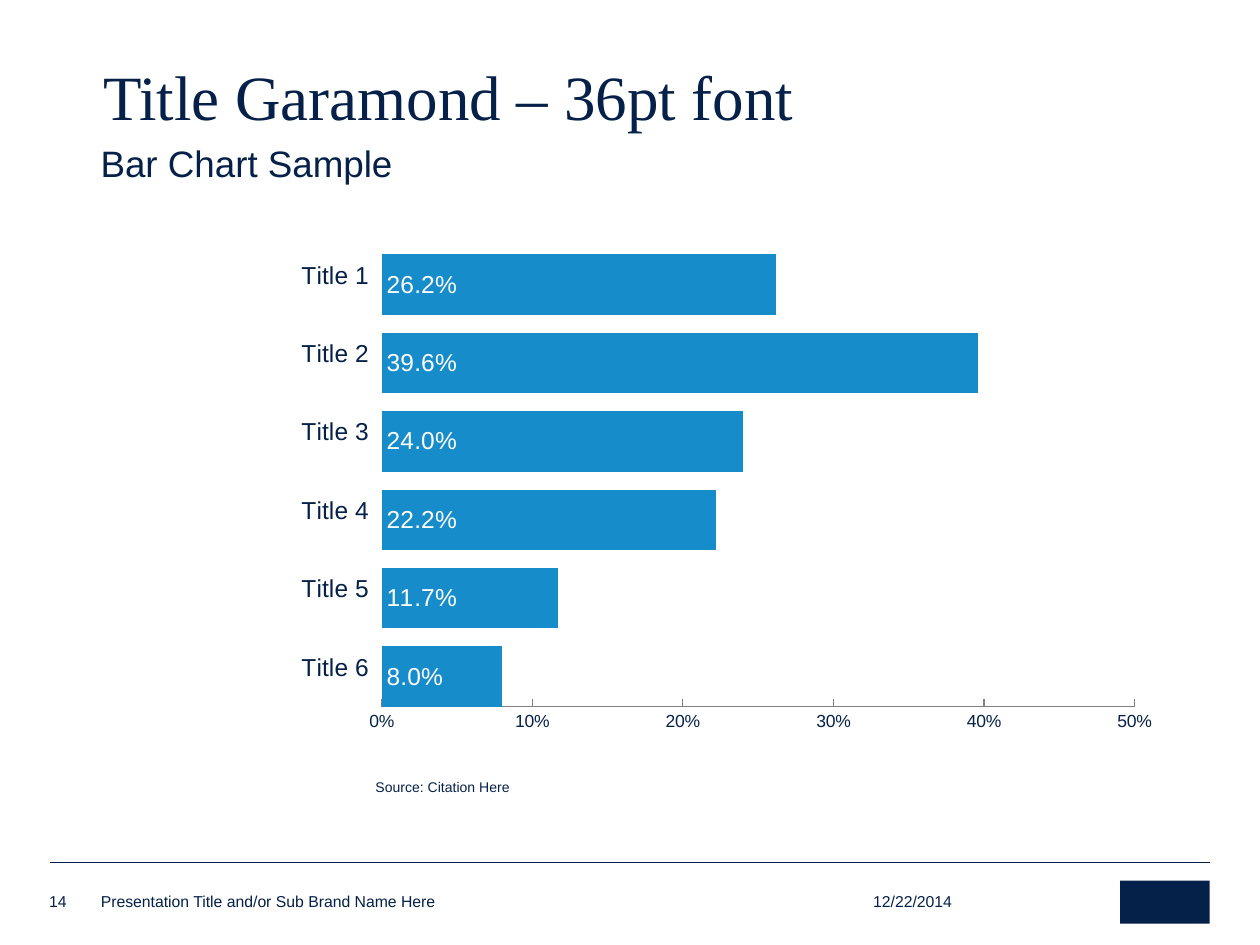
from dataclasses import dataclass

from lxml import etree
from pptx import Presentation
from pptx.chart.data import CategoryChartData
from pptx.dml.color import RGBColor
from pptx.enum.chart import XL_CHART_TYPE as ChartType
from pptx.enum.chart import XL_LABEL_POSITION as LabelPosition
from pptx.enum.chart import XL_TICK_MARK as TickMark
from pptx.enum.shapes import MSO_CONNECTOR as Connector
from pptx.enum.shapes import MSO_SHAPE as Shape
from pptx.enum.text import MSO_ANCHOR as Anchor
from pptx.oxml import parse_xml
from pptx.oxml.ns import nsdecls, qn
from pptx.util import Inches, Pt


@dataclass(frozen=True)
class Theme:
    navy: RGBColor = RGBColor(0x05, 0x20, 0x49)
    blue: RGBColor = RGBColor(0x17, 0x8C, 0xCB)
    gray: RGBColor = RGBColor(0x80, 0x80, 0x80)
    white: RGBColor = RGBColor(0xFF, 0xFF, 0xFF)
    serif: str = "Times New Roman"
    sans: str = "Arial"
    title: int = 36
    subtitle: int = 21
    category: int = 14
    scale: int = 10
    footer: int = 9
    source: int = 8


def set_all(target, values):
    for name, value in values.items():
        setattr(target, name, value)


class SlideBuilder:
    """Places elements on a grid of 100 columns by 75 rows."""

    columns, rows = 100, 75

    def __init__(self, presentation, theme):
        self.theme = theme
        self.column = presentation.slide_width / self.columns
        self.row = presentation.slide_height / self.rows
        self.slide = presentation.slides.add_slide(presentation.slide_layouts[6])

    def place(self, column, row, width, height):
        return (round(column * self.column), round(row * self.row),
                round(width * self.column), round(height * self.row))

    def style_font(self, font, size, color=None, name=None):
        set_all(font, {"size": Pt(size), "name": name or self.theme.sans})
        font.color.rgb = color or self.theme.navy

    def text(self, words, area, size, font=None, spacing=1.0,
             anchor=Anchor.TOP, inset=(0, 0)):
        """Inset is horizontal, vertical in inches."""
        box = self.slide.shapes.add_textbox(*self.place(*area))
        across, down = map(Inches, inset)
        set_all(box.text_frame, {
            "word_wrap": True, "vertical_anchor": anchor,
            "margin_left": across, "margin_right": across,
            "margin_top": down, "margin_bottom": down})
        paragraph = box.text_frame.paragraphs[0]
        paragraph.line_spacing = spacing
        run = paragraph.add_run()
        run.text = words
        self.style_font(run.font, size, name=font)

    def rule(self, left, right, row):
        x, y, width, _ = self.place(left, row, right - left, 0)
        line = self.slide.shapes.add_connector(
            Connector.STRAIGHT, x, y, x + width, y)
        line.line.color.rgb = self.theme.navy
        line.line.width = Pt(0.25)
        etree.SubElement(line._element.spPr, qn("a:effectLst"))

    def block(self, area):
        shape = self.slide.shapes.add_shape(Shape.RECTANGLE, *self.place(*area))
        shape.shadow.inherit = False
        shape.fill.solid()
        shape.fill.fore_color.rgb = self.theme.navy
        shape.line.fill.background()

    def bar_chart(self, area, categories, series, plot_area):
        theme = self.theme
        data = CategoryChartData(number_format="0.0%")
        data.categories = categories
        for name, values in series.items():
            data.add_series(name, values)
        chart = self.slide.shapes.add_chart(
            ChartType.BAR_CLUSTERED, *self.place(*area), data).chart
        set_all(chart, {"has_legend": False, "has_title": False})
        self.style_font(chart.font, 18, name=theme.serif)
        plot = chart.plots[0]
        set_all(plot, {"gap_width": 0, "overlap": 70, "vary_by_categories": False})
        for bars in plot.series:
            bars.format.fill.solid()
            bars.format.fill.fore_color.rgb = theme.blue
        labels = plot.series[0].data_labels
        set_all(labels, {
            "show_value": True, "position": LabelPosition.INSIDE_BASE,
            "number_format": "0.0%", "number_format_is_linked": False})
        self.style_font(labels.font, theme.category, theme.white)
        self.style_axes(chart)
        self.fix_plot_area(chart, plot_area)

    def style_axes(self, chart):
        category, value = chart.category_axis, chart.value_axis
        set_all(category, {"major_tick_mark": TickMark.OUTSIDE,
                           "has_major_gridlines": False})
        category.format.line.fill.background()
        self.style_font(category.tick_labels.font, self.theme.category)
        set_all(value, {
            "minimum_scale": 0, "maximum_scale": 0.5, "major_unit": 0.1,
            "major_tick_mark": TickMark.INSIDE, "has_major_gridlines": False})
        set_all(value.tick_labels, {"number_format": "0%",
                                    "number_format_is_linked": False})
        value.format.line.color.rgb = self.theme.gray
        self.style_font(value.tick_labels.font, self.theme.scale)

    @staticmethod
    def fix_plot_area(chart, shares):
        """Pin the inner plot area to x, y, w, h shares of the chart."""
        plot_area = chart._chartSpace.chart.plotArea
        for layout in plot_area.findall(qn("c:layout")):
            plot_area.remove(layout)
        modes = "".join(f'<c:{axis}Mode val="edge"/>' for axis in "xy")
        sizes = "".join(f'<c:{key} val="{share}"/>'
                        for key, share in zip("xywh", shares))
        plot_area.insert(0, parse_xml(
            f'<c:layout {nsdecls("c")}><c:manualLayout>'
            f'<c:layoutTarget val="inner"/>{modes}{sizes}'
            '</c:manualLayout></c:layout>'))


def main():
    theme = Theme()
    presentation = Presentation()
    set_all(presentation, {"slide_width": Inches(10), "slide_height": Inches(7.5)})
    builder = SlideBuilder(presentation, theme)

    builder.rule(4, 96, 68.4)
    builder.block((88.9, 69.9, 7.1, 3.4))
    builder.text("Title Garamond – 36pt font", (7.2, 4.8, 88.4, 6.3), theme.title,
                 font=theme.serif, spacing=0.85, anchor=Anchor.BOTTOM,
                 inset=(0.1, 0.05))
    builder.text("Bar Chart Sample", (7, 11.1, 88.3, 4.2), theme.subtitle,
                 spacing=0.9, inset=(0.1, 0.05))

    footers = {"12/22/2014": (69.3, 10.1),
               "Presentation Title and/or Sub Brand Name Here": (8, 47.1),
               "14": (3.9, 2.7)}
    for words, (column, width) in footers.items():
        builder.text(words, (column, 70.6, width, 1.7), theme.footer,
                     anchor=Anchor.BOTTOM)

    shares = [0.08, 0.117, 0.222, 0.24, 0.396, 0.262]
    categories = [f"Title {number}" for number in range(len(shares), 0, -1)]
    builder.bar_chart((22.5, 15.7, 73.5, 44.4), categories,
                      {"Series 1": shares, "Series 2": [None] * len(shares)},
                      plot_area=(0.106, 0.069, 0.813, 0.841))
    builder.text("Source: Citation Here", (29.8, 61.9, 16.6, 1.2), theme.source,
                 spacing=0.9)
    presentation.save("out.pptx")


if __name__ == "__main__":
    main()
